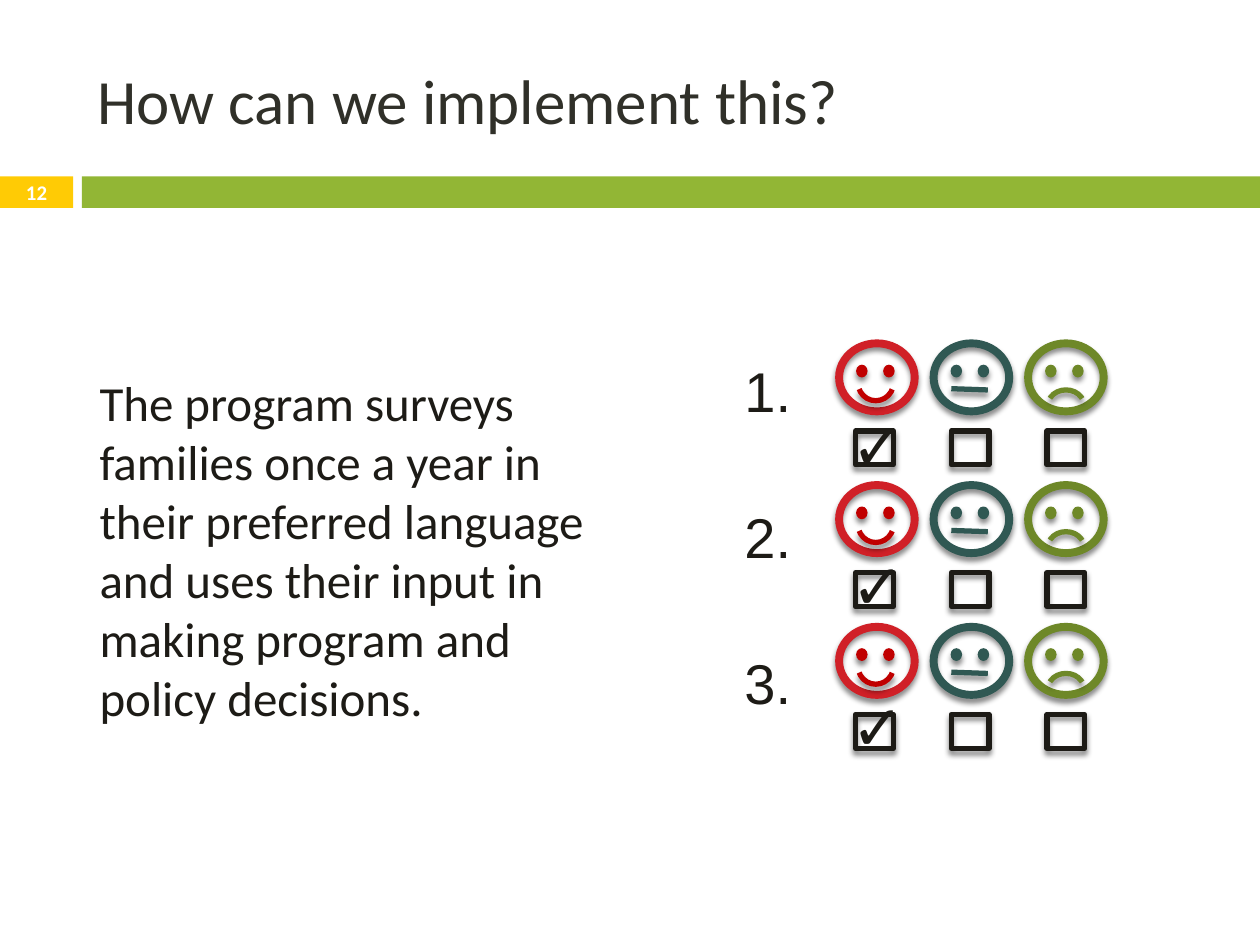
import dataclasses

import pptx
import pptx.util
import pptx.dml.color
import pptx.enum.shapes
import pptx.enum.text
import pptx.oxml
import pptx.oxml.ns

Pt = pptx.util.Pt
Kind = pptx.enum.shapes.MSO_SHAPE
Fit = pptx.enum.text.MSO_AUTO_SIZE
Align = pptx.enum.text.PP_ALIGN
Anchor = pptx.enum.text.MSO_ANCHOR


@dataclasses.dataclass
class Theme:
    font: str = "Calibri"
    plain: str = "Arial"
    white: str = "FFFFFF"
    ink: str = "1D1B16"
    head: str = "303029"
    gold: str = "FFCB05"
    green: str = "92B635"
    rim: str = "D02027"
    red: str = "C00000"
    teal: str = "305853"
    olive: str = "6E8828"
    big: float = 36
    label: float = 32
    body: float = 28
    small: float = 11.9
    thick: float = 4.5
    line: float = 3
    thin: float = 0.79


SHADE = (
    '<a:effectLst %s><a:outerShdw blurRad="38100" dist="30480" dir="5400000" '
    'rotWithShape="0"><a:srgbClr val="000000"><a:alpha val="45000"/>'
    "</a:srgbClr></a:outerShdw></a:effectLst>"
) % pptx.oxml.ns.nsdecls("a")


def paint(name):
    return pptx.dml.color.RGBColor.from_string(name)


class Page:
    COLS, ROWS = 100, 75

    def __init__(self, deck, look):
        self.look = look
        self.col = deck.slide_width / self.COLS
        self.row = deck.slide_height / self.ROWS
        self.slide = deck.slides.add_slide(deck.slide_layouts[1])

    def area(self, x, y, w, h):
        return (int(x * self.col), int(y * self.row),
                int(w * self.col), int(h * self.row))

    def group(self):
        return self.slide.shapes.add_group_shape().shapes

    def shade(self, item):
        props = item._element.spPr
        for old in props.findall(pptx.oxml.ns.qn("a:effectLst")):
            props.remove(old)
        props.append(pptx.oxml.parse_xml(SHADE))

    def shape(self, kind, box, fill=None, line=None, width=0, home=None):
        home = self.slide.shapes if home is None else home
        item = home.add_shape(kind, *self.area(*box))
        item.shadow.inherit = False
        if fill:
            item.fill.solid()
            item.fill.fore_color.rgb = paint(fill)
        else:
            item.fill.background()
        if line:
            item.line.color.rgb = paint(line)
            item.line.width = Pt(width)
            self.shade(item)
        else:
            item.line.fill.background()
        return item

    def arc(self, box, line, home, turn=0):
        item = self.shape(Kind.ARC, box, None, line, self.look.line, home)
        item.adjustments[0] = 120.526
        item.adjustments[1] = 204.062
        item.rotation = turn

    def dash(self, x, y, w, h, line, home):
        left, top, wide, high = self.area(x, y, w, h)
        item = home.add_connector(pptx.enum.shapes.MSO_CONNECTOR.STRAIGHT,
                                  left, top, left + wide, top + high)
        item.line.color.rgb = paint(line)
        item.line.width = Pt(self.look.line)
        self.shade(item)

    def word(self, item, text, size, color, font=None, bold=None,
             slant=None, align=Align.LEFT, anchor=Anchor.MIDDLE,
             fit=Fit.NONE):
        frame = item.text_frame
        frame.word_wrap = True
        frame.auto_size = fit
        frame.vertical_anchor = anchor
        para = frame.paragraphs[0]
        para.alignment = align
        run = para.add_run()
        run.text = text
        run.font.name = font or self.look.font
        run.font.size = Pt(size)
        run.font.color.rgb = paint(color)
        run.font.bold = bold
        run.font.italic = slant
        return para

    def text(self, box, *args, **style):
        self.word(self.slide.shapes.add_textbox(*self.area(*box)),
                  *args, **style)

    def holder(self, item, box, *args):
        item.left, item.top, item.width, item.height = self.area(*box)
        return self.word(item, *args)

    def title(self, box, text):
        self.holder(self.slide.shapes.title, box, text,
                    self.look.big, self.look.head)

    def body(self, box, text):
        para = self.holder(self.slide.placeholders[1], box, text,
                           self.look.body, self.look.ink)
        para.space_before = Pt(7)
        props = para._p.get_or_add_pPr()
        props.set("marL", str(int(3.5 * self.col)))
        props.set("indent", "0")
        props.append(pptx.oxml.parse_xml(
            "<a:buNone %s/>" % pptx.oxml.ns.nsdecls("a")))

    def face(self, x, y, rim, color, mood, home):
        look = self.look
        self.shape(Kind.OVAL, (x, y, 6, 5.4), None, rim, look.thick, home)
        for eye in (3.55, 1.4):
            self.shape(Kind.OVAL, (x + eye, y + 1.75, 0.8, 0.9),
                       color, color, look.thin, home)
        if mood == "happy":
            self.arc((x + 1.5, y + 1.75, 2.8, 2.8), color, home, 180)
        elif mood == "flat":
            self.dash(x + 1.4, y + 3.6, 2.9, 0.1, color, home)
        else:
            self.arc((x + 1.6, y + 3.7, 2.8, 2.3), color, home)

    def survey(self, index):
        look = self.look
        home = self.group()
        y = 27.25 + 11.25 * index
        faces = [(look.rim, look.red, "happy"),
                 (look.teal, look.teal, "flat"),
                 (look.olive, look.olive, "sad")]
        for k, (rim, color, mood) in enumerate(faces):
            self.face(66.6 + 7.5 * k, y, rim, color, mood, home)
        for k in range(len(faces)):
            self.shape(Kind.RECTANGLE, (67.9 + 7.6 * k, y + 6.95, 3, 2.7),
                       None, look.ink, look.line, home)
        style = dict(anchor=Anchor.TOP, fit=Fit.SHAPE_TO_FIT_TEXT)
        self.text((66.6, 31.75 + 11.15 * index, 5, 7.1), "✓",
                  look.big, look.ink, bold=True, slant=True, **style)
        self.text((58.1, 27.8 + 11.6 * index, 7.4, 6.4), f"{index + 1}.",
                  look.label, look.ink, look.plain, **style)


def main():
    deck = pptx.Presentation()
    deck.slide_width = pptx.util.Inches(10)
    deck.slide_height = pptx.util.Inches(7.5)
    look = Theme()
    page = Page(deck, look)
    page.shape(Kind.RECTANGLE, (0, 14, 5.8, 2.5), look.gold)
    page.shape(Kind.RECTANGLE, (6.5, 14, 93.5, 2.5), look.green)
    page.title((6.7, 2.5, 89.2, 10.8), "How can we implement this?")
    page.body((3.4, 18.8, 45.7, 49.6),
              "The program surveys families once a year in their preferred "
              "language and uses their input in making program and policy "
              "decisions.")
    page.text((0, 13.9, 5.8, 2.7), "12", look.small, look.white,
              bold=True, align=Align.CENTER)
    for index in range(3):
        page.survey(index)
    deck.save("out.pptx")


if __name__ == "__main__":
    main()
